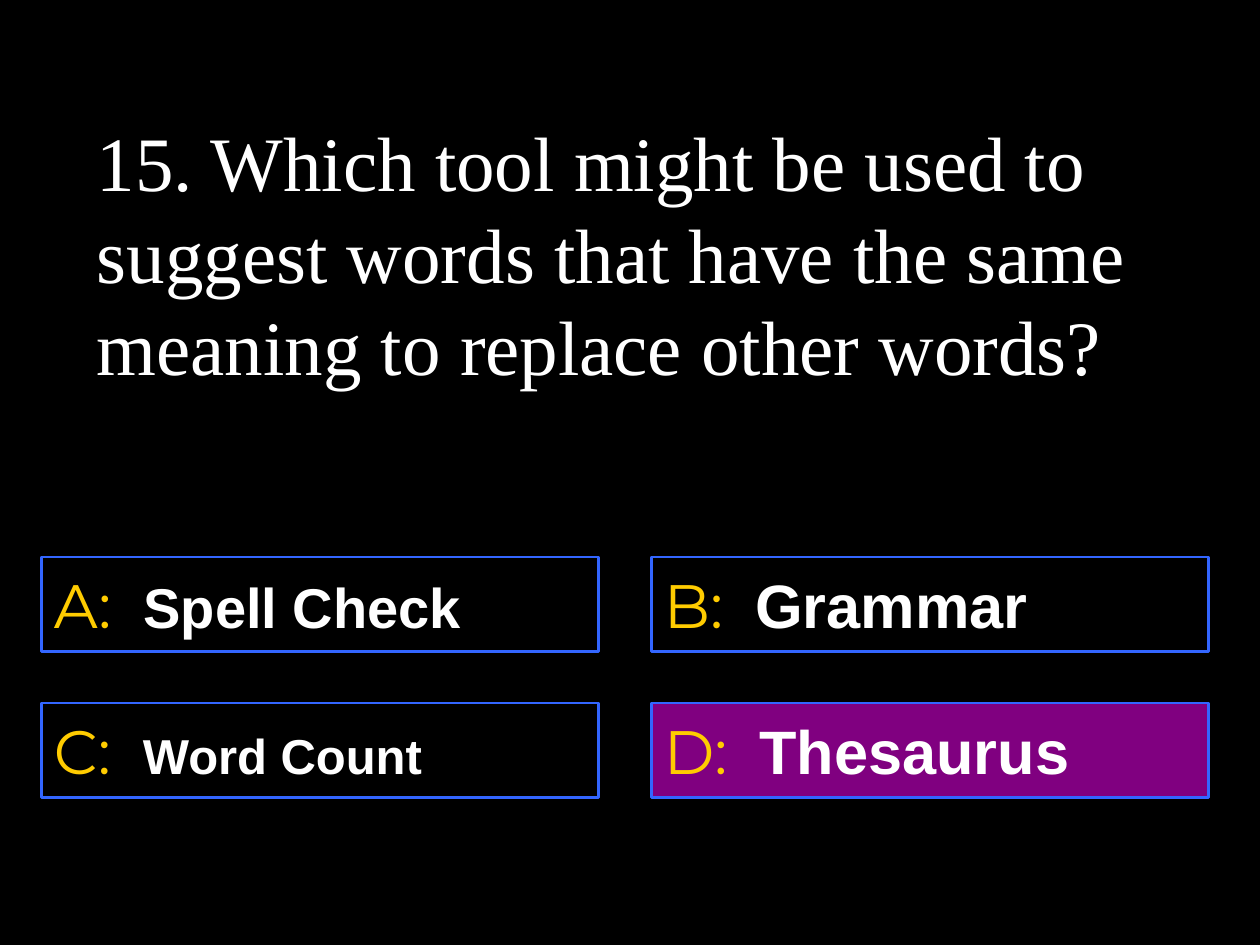
from lxml import etree
from pptx import Presentation
from pptx.dml.color import RGBColor
from pptx.enum.shapes import MSO_SHAPE
from pptx.enum.text import MSO_ANCHOR, PP_ALIGN
from pptx.oxml.ns import qn
from pptx.util import Inches, Pt

RECT = MSO_SHAPE.RECTANGLE
MIDDLE = MSO_ANCHOR.MIDDLE
LEFT = PP_ALIGN.LEFT

BLACK = RGBColor(0x00, 0x00, 0x00)
WHITE = RGBColor(0xFF, 0xFF, 0xFF)
BLUE = RGBColor(0x33, 0x66, 0xFF)
GOLD = RGBColor(0xFF, 0xCC, 0x00)
PINK = RGBColor(0xFF, 0x00, 0xFF)

# Content: letter, answer, text size, fill
QUESTION = ("15. Which tool might be used to suggest words that have "
            "the same meaning to replace other words?")
ANSWERS = [
    ("A", "Spell Check", 32, BLACK),
    ("B", "Grammar", 35, BLACK),
    ("C", "Word Count", 28, BLACK),
    ("D", "Thesaurus", 35, PINK),
]

# Answer grid
COLS = 2
X, Y = 0.33, 4.42
WIDTH, HEIGHT = 4.42, 0.75
STEP_X, STEP_Y = 4.84, 1.16


def add_run(para, text, size, font, color, bold=False):
    run = para.add_run()
    run.text = text
    run.font.size = Pt(size)
    run.font.name = font
    run.font.color.rgb = color
    run.font.bold = bold


def set_frame(shape, wrap):
    frame = shape.text_frame
    frame.word_wrap = wrap
    frame.vertical_anchor = MIDDLE
    para = frame.paragraphs[0]
    para.alignment = LEFT
    return para


def set_fill(shape, color, alpha):
    shape.fill.solid()
    shape.fill.fore_color.rgb = color
    tone = shape.fill._xPr.find(qn("a:solidFill"))[0]
    etree.SubElement(tone, qn("a:alpha"), val=str(alpha * 1000))


def add_answer(slide, index, letter, answer, size, fill):
    row, col = divmod(index, COLS)
    box = slide.shapes.add_shape(
        RECT, Inches(X + col * STEP_X), Inches(Y + row * STEP_Y),
        Inches(WIDTH), Inches(HEIGHT))
    box.shadow.inherit = False
    set_fill(box, fill, 50)
    box.line.color.rgb = BLUE
    box.line.width = Pt(1.5)
    para = set_frame(box, False)
    add_run(para, f"{letter}:  ", 35, "Montserrat", GOLD)
    add_run(para, answer, size, "Arial", WHITE, True)


def main():
    deck = Presentation()
    deck.slide_width, deck.slide_height = Inches(10), Inches(7.5)
    slide = deck.slides.add_slide(deck.slide_layouts[6])
    slide.background.fill.solid()
    slide.background.fill.fore_color.rgb = BLACK

    # Answers
    for index, item in enumerate(ANSWERS):
        add_answer(slide, index, *item)

    # Question
    title = slide.shapes.add_textbox(
        Inches(0.67), Inches(0.67), Inches(8.5), Inches(2.67))
    add_run(set_frame(title, True), QUESTION, 44, "Times New Roman", WHITE)

    deck.save("out.pptx")


if __name__ == "__main__":
    main()
